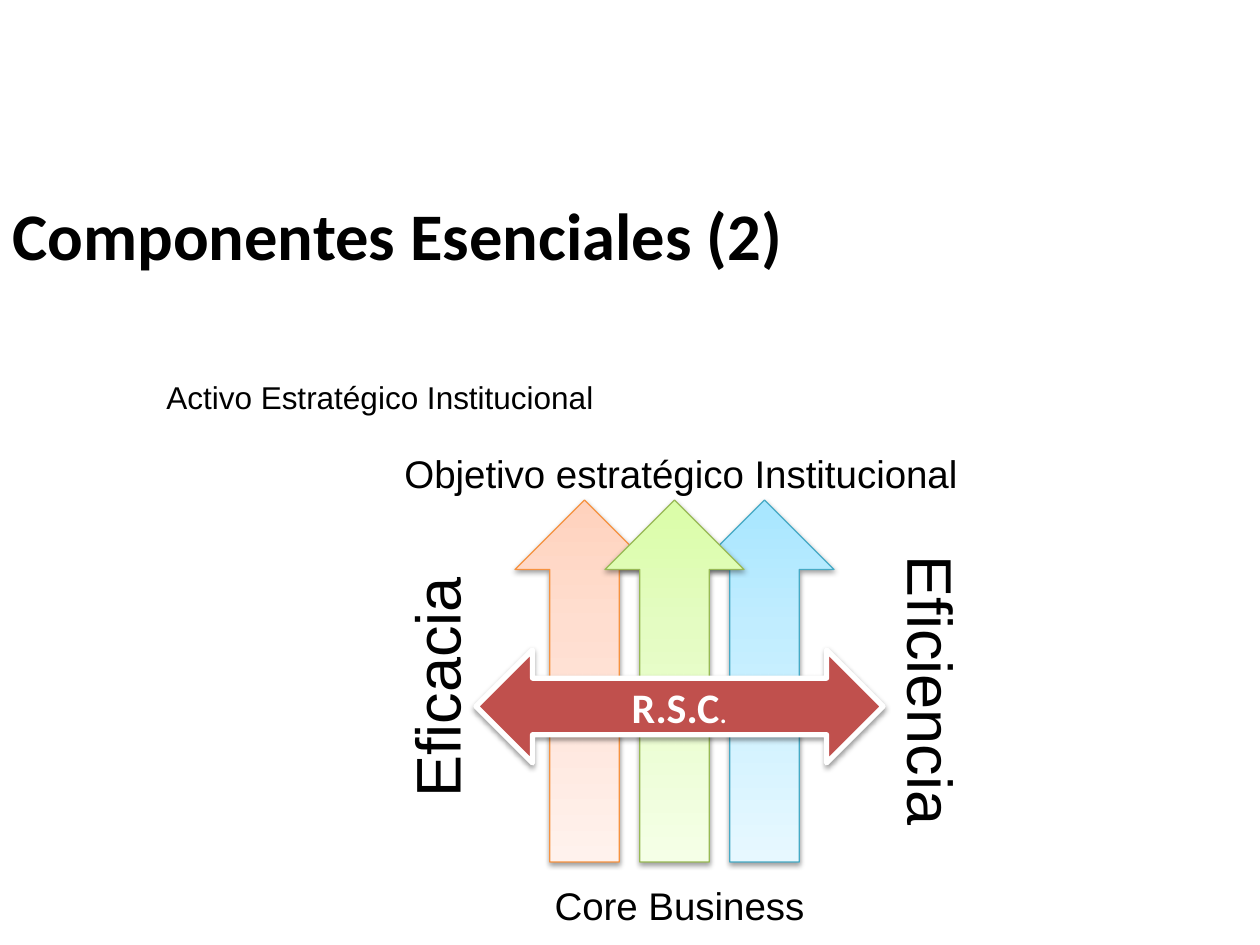
from lxml.etree import SubElement
from copy import deepcopy
from pptx import Presentation
from pptx.dml.color import RGBColor
from pptx.enum.shapes import MSO_SHAPE
from pptx.enum.text import MSO_ANCHOR, MSO_AUTO_SIZE, PP_ALIGN
from pptx.oxml.ns import qn
from pptx.util import Emu, Pt

PX_PER_INCH = 126


def px(length):
    return Emu(round(length * 914400 / PX_PER_INCH))


def color(hex_string):
    return RGBColor.from_string(hex_string)


def add_text(paragraph, text, size=18, font="Arial", fill="000000", bold=False):
    run = paragraph.add_run()
    run.text = text
    run.font.size = Pt(size)
    run.font.name = font
    run.font.bold = bold
    run.font.color.rgb = color(fill)


class SlideBuilder:
    def __init__(self, slide):
        self.slide = slide

    def label(self, text, box, rotation=0, align=PP_ALIGN.LEFT,
              anchor=MSO_ANCHOR.TOP, grow=True, **text_format):
        shape = self.slide.shapes.add_textbox(*map(px, box))
        shape.rotation = rotation
        frame = shape.text_frame
        frame.word_wrap = True
        frame.vertical_anchor = anchor
        frame.auto_size = MSO_AUTO_SIZE.SHAPE_TO_FIT_TEXT if grow else MSO_AUTO_SIZE.NONE
        frame.paragraphs[0].alignment = align
        add_text(frame.paragraphs[0], text, **text_format)

    def arrow(self, kind, box, line, line_width):
        shape = self.slide.shapes.add_shape(kind, *map(px, box))
        shape.line.color.rgb = color(line)
        shape.line.width = Pt(line_width)
        self.soft_shadow(shape)
        return shape

    def soft_shadow(self, shape):
        shape.shadow.inherit = False
        effects = shape._element.spPr.find(qn("a:effectLst"))
        shadow = SubElement(effects, qn("a:outerShdw"), blurRad="40000",
                            dist="20000", dir="5400000", rotWithShape="0")
        shade = SubElement(shadow, qn("a:srgbClr"), val="000000")
        SubElement(shade, qn("a:alpha"), val="38000")

    def pillar(self, left, line, shades):
        """Upward arrow with a three-stop gradient, darkest at the tip."""
        shape = self.arrow(MSO_SHAPE.DOWN_ARROW, (left, 500, 139, 362), line, 0.75)
        shape.rotation = 180
        shape.fill.gradient()
        shape.fill.gradient_angle = 90
        stop_list = shape._element.spPr.find(qn("a:gradFill")).find(qn("a:gsLst"))
        stop_list.append(deepcopy(stop_list[0]))
        stops = shape.fill.gradient_stops
        for stop, position, shade in zip(stops, (0, 0.35, 1), shades):
            stop.position = position
            stop.color.rgb = color(shade)

    def crossbar(self, box, fill):
        shape = self.arrow(MSO_SHAPE.LEFT_RIGHT_ARROW, box, "FFFFFF", 3)
        shape.fill.solid()
        shape.fill.fore_color.rgb = color(fill)
        frame = shape.text_frame
        frame.vertical_anchor = MSO_ANCHOR.MIDDLE
        paragraph = frame.paragraphs[0]
        paragraph.alignment = PP_ALIGN.CENTER
        add_text(paragraph, "R.S.C", size=24, font="Calibri", fill="FFFFFF", bold=True)
        add_text(paragraph, ".", size=18, font="Calibri", fill="FFFFFF")


def main():
    presentation = Presentation()
    presentation.slide_width = px(1260)
    presentation.slide_height = px(945)
    builder = SlideBuilder(presentation.slides.add_slide(presentation.slide_layouts[6]))

    builder.label("Componentes Esenciales (2)", (0, 155, 1221, 158), size=38,
                  font="Calibri", bold=True, anchor=MSO_ANCHOR.MIDDLE, grow=False)

    # The middle pillar comes last so that it overlaps its neighbours.
    pillars = [
        (0, "F69240", ("FFD2BD", "FFDED0", "FFF2ED")),
        (2, "46AAC5", ("A7E6FF", "C1EDFF", "E7F8FF")),
        (1, "98B955", ("DAFDA7", "E4FCC2", "F5FFE7")),
    ]
    for column, line, shades in pillars:
        builder.pillar(515 + 90 * column, line, shades)
    builder.crossbar((476, 650, 407, 113), "C0504D")

    builder.label("Activo Estratégico Institucional", (154, 372, 476, 50), size=18)
    builder.label("Objetivo estratégico Institucional", (392, 444, 585, 59), size=22)
    center = PP_ALIGN.CENTER
    builder.label("Eficiencia", (748, 646, 368, 89), rotation=90, align=center, size=36)
    builder.label("Eficacia", (249, 643, 374, 89), rotation=270, align=center, size=36)
    builder.label("Core Business", (387, 876, 585, 59), align=center, size=22)

    presentation.save("out.pptx")


if __name__ == "__main__":
    main()
